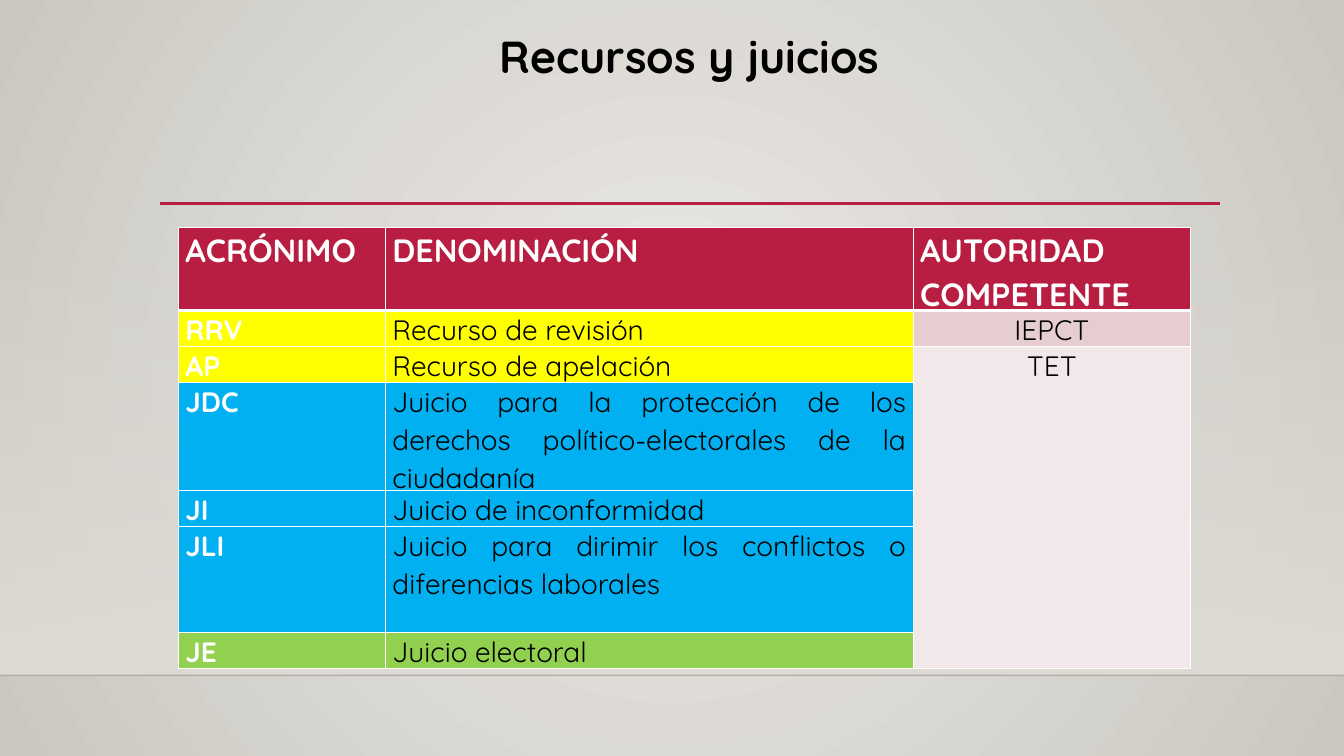
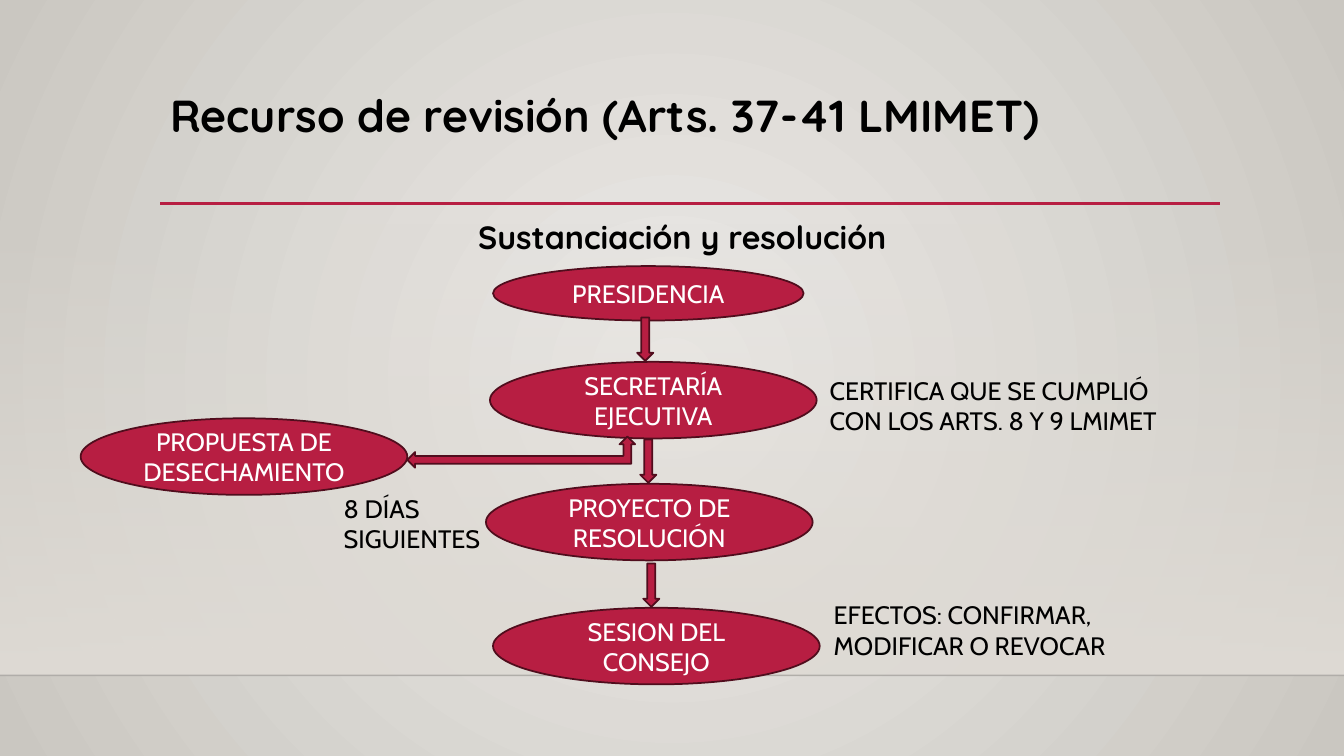
from dataclasses import dataclass

from lxml.etree import SubElement
from pptx import Presentation
from pptx.dml.color import RGBColor
from pptx.enum.shapes import MSO_CONNECTOR, MSO_SHAPE
from pptx.enum.text import MSO_ANCHOR, PP_ALIGN
from pptx.oxml import parse_xml
from pptx.oxml.ns import nsdecls, qn
from pptx.util import Inches, Pt


@dataclass(frozen=True)
class Theme:
    heading_font: str = "Quicksand"
    label_font: str = "Cabin"
    title_size: int = 32
    subtitle_size: int = 23
    cell_size: int = 20
    label_size: int = 18
    black: str = "000000"
    white: str = "FFFFFF"
    crimson: str = "B71E42"
    outline: str = "500D1D"
    floor: str = "000001"
    glow: str = "ECEAE7"
    edge: str = "CAC7C1"
    wall: str = "DFDBD5"
    yellow: str = "FFFF00"
    blue: str = "00B0F0"
    green: str = "92D050"
    rose: str = "E6CDCF"
    pale_rose: str = "F3E8E9"


THEME = Theme()


@dataclass(frozen=True)
class Box:
    left: float
    top: float
    width: float
    height: float

    def place(self):
        return [Inches(v) for v in (self.left, self.top, self.width, self.height)]

    def cell(self, columns, rows, col, row, col_span, row_span):
        """Box covering a span of a grid laid over this one."""
        col_width, row_height = self.width / columns, self.height / rows
        return Box(self.left + col * col_width, self.top + row * row_height,
                   col_span * col_width, row_span * row_height)


SLIDE = Box(0, 0, 13.33, 7.5)
RULE_LEFT, RULE_RIGHT, RULE_TOP = 1.59, 12.1, 2.02
FLOOR_TOP = 6.7


# Shared helpers
def rgb(color):
    return RGBColor.from_string(color)


def write(frame, text, size, color=THEME.black, font=THEME.heading_font,
          bold=False, align=PP_ALIGN.LEFT, spacing=1.0):
    frame.word_wrap = True
    paragraph = frame.paragraphs[0]
    paragraph.alignment = align
    paragraph.line_spacing = spacing
    run = paragraph.add_run()
    run.text = text
    run.font.name = font
    run.font.size = Pt(size)
    run.font.bold = bold
    run.font.color.rgb = rgb(color)


def add_text(slide, box, text, size, **style):
    write(slide.shapes.add_textbox(*box.place()).text_frame, text, size, **style)


def gradient(start, end, direction, start_alpha=100):
    return parse_xml(
        f'<a:gradFill {nsdecls("a")} rotWithShape="1"><a:gsLst>'
        f'<a:gs pos="0"><a:srgbClr val="{start}">'
        f'<a:alpha val="{start_alpha * 1000}"/></a:srgbClr></a:gs>'
        f'<a:gs pos="100000"><a:srgbClr val="{end}"/></a:gs>'
        f'</a:gsLst>{direction}</a:gradFill>')


def add_rule(slide, left, right, top, color, weight, alpha=100):
    rule = slide.shapes.add_connector(
        MSO_CONNECTOR.STRAIGHT, *[Inches(v) for v in (left, top, right, top)])
    rule.line.width = Pt(weight)
    rule.line.color.rgb = rgb(color)
    properties = rule.element.spPr
    tint = properties.find(".//" + qn("a:srgbClr"))
    SubElement(tint, qn("a:alpha"), val=str(alpha * 1000))
    SubElement(properties, qn("a:effectLst"))


def add_solid(slide, preset, box):
    solid = slide.shapes.add_shape(preset, *box.place())
    solid.shadow.inherit = False
    solid.fill.solid()
    solid.fill.fore_color.rgb = rgb(THEME.crimson)
    solid.line.color.rgb = rgb(THEME.outline)
    solid.line.width = Pt(1.25)
    return solid


# Room backdrop, crimson rule and title
def add_backdrop(slide):
    background = parse_xml(f'<p:bg {nsdecls("p", "a")}><p:bgPr><a:effectLst/></p:bgPr></p:bg>')
    background[0].insert(0, gradient(
        THEME.glow, THEME.edge,
        '<a:path path="circle"><a:fillToRect l="50000" t="50000" r="50000" b="50000"/></a:path>'))
    slide.element.cSld.insert(0, background)

    wall_box = Box(0, 2.21, SLIDE.width, FLOOR_TOP - 2.21)
    wall = slide.shapes.add_shape(MSO_SHAPE.RECTANGLE, *wall_box.place())
    wall.shadow.inherit = False
    wall.line.fill.background()
    wall.fill.background()
    properties = wall.element.spPr
    properties.replace(properties.find(qn("a:noFill")), gradient(
        THEME.wall, THEME.wall, '<a:lin ang="5400000" scaled="0"/>', start_alpha=0))

    add_rule(slide, 0, SLIDE.width, FLOOR_TOP, THEME.floor, 1, alpha=20)
    add_rule(slide, RULE_LEFT, RULE_RIGHT, RULE_TOP, THEME.crimson, 2.5)


def new_slide(deck, title, title_top, align=PP_ALIGN.LEFT):
    slide = deck.slides.add_slide(deck.slide_layouts[6])
    add_backdrop(slide)
    add_text(slide, Box(RULE_LEFT, title_top, 10.5, 1.15), title, THEME.title_size,
             bold=True, align=align, spacing=0.9)
    return slide


# Table of remedies
HEADERS = ("ACRÓNIMO", "DENOMINACIÓN", "AUTORIDAD COMPETENTE")
REMEDIES = (
    ("RRV", "Recurso de revisión", THEME.yellow, 0.34),
    ("AP", "Recurso de apelación", THEME.yellow, 0.34),
    ("JDC", "Juicio para la protección de los derechos político-electorales de la ciudadanía",
     THEME.blue, 1.05),
    ("JI", "Juicio de inconformidad", THEME.blue, 0.34),
    ("JLI", "Juicio para dirimir los conflictos o diferencias laborales", THEME.blue, 1.05),
    ("JE", "Juicio electoral", THEME.green, 0.34),
)
HEADER_HEIGHT = 0.69
COLUMN_SHARES = (20.44, 52.14, 27.42)


def style_cell(cell, fill, top=1, bottom=1):
    cell.margin_left = cell.margin_right = Inches(0.07)
    cell.margin_top = cell.margin_bottom = 0
    properties = cell._tc.get_or_add_tcPr()
    for side, weight in (("L", 1), ("R", 1), ("T", top), ("B", bottom)):
        properties.append(parse_xml(
            f'<a:ln{side} {nsdecls("a")} w="{Pt(weight)}"><a:solidFill>'
            f'<a:srgbClr val="{THEME.white}"/></a:solidFill></a:ln{side}>'))
    cell.fill.solid()
    cell.fill.fore_color.rgb = rgb(fill)


def add_remedies(slide, box):
    table = slide.shapes.add_table(len(REMEDIES) + 1, len(HEADERS), *box.place()).table
    for column, share in zip(table.columns, COLUMN_SHARES):
        column.width = Inches(box.width * share / 100)
    table.rows[0].height = Inches(HEADER_HEIGHT)

    for col, header in enumerate(HEADERS):
        cell = table.cell(0, col)
        style_cell(cell, THEME.crimson, bottom=3)
        write(cell.text_frame, header, THEME.subtitle_size, THEME.white,
              bold=True, spacing=1.07)

    for row, (acronym, name, color, height) in enumerate(REMEDIES, start=1):
        table.rows[row].height = Inches(height)
        authority = "IEPCT" if row == 1 else "TET" if row == 2 else ""
        authority_fill = THEME.rose if row == 1 else THEME.pale_rose
        columns = (
            (acronym, color, THEME.white, True, PP_ALIGN.LEFT),
            (name, color, THEME.black, False, PP_ALIGN.JUSTIFY),
            (authority, authority_fill, THEME.black, False, PP_ALIGN.CENTER),
        )
        for col, (text, fill, ink, bold, align) in enumerate(columns):
            cell = table.cell(row, col)
            style_cell(cell, fill, top=3 if row == 1 else 1)
            if text:
                write(cell.text_frame, text, THEME.cell_size, ink,
                      bold=bold, align=align, spacing=1.07)
    table.cell(2, 2).merge(table.cell(len(REMEDIES), 2))


# Flow of the review: places are column, row, columns wide, rows high
FLOW_GRID = (55, 21)
STAGES = (
    ("PRESIDENCIA", (20.45, 0.2, 15.4, 2.7)),
    ("SECRETARÍA EJECUTIVA", (20.3, 4.95, 16.2, 3.8)),
    ("PROPUESTA DE DESECHAMIENTO", (0, 7.75, 16.2, 3.8)),
    ("PROYECTO DE RESOLUCIÓN", (20.1, 11, 16.2, 3.8)),
    ("SESION DEL CONSEJO", (20.45, 17.15, 16.2, 3.8)),
)
STEPS = (
    (MSO_SHAPE.DOWN_ARROW, (27.6, 2.75, 0.8, 2.15)),
    (MSO_SHAPE.LEFT_UP_ARROW, (16.2, 8.65, 11.3, 1.55)),
    (MSO_SHAPE.DOWN_ARROW, (27.75, 8.8, 0.8, 2.15)),
    (MSO_SHAPE.DOWN_ARROW, (27.9, 14.95, 0.8, 2.15)),
)
REMARKS = (
    ("CERTIFICA QUE SE CUMPLIÓ CON LOS ARTS. 8 Y 9 LMIMET", (36.65, 5.35, 17.85, 3.55)),
    ("8 DÍAS SIGUIENTES", (12.55, 11.2, 8.05, 3.55)),
    ("EFECTOS: CONFIRMAR, MODIFICAR O REVOCAR", (36.85, 16.5, 17.85, 3.55)),
)


def add_flow(slide, box):
    for stage, place in STAGES:
        oval = add_solid(slide, MSO_SHAPE.OVAL, box.cell(*FLOW_GRID, *place))
        oval.text_frame.vertical_anchor = MSO_ANCHOR.MIDDLE
        write(oval.text_frame, stage, THEME.label_size, THEME.white,
              THEME.label_font, align=PP_ALIGN.CENTER)
    for arrow, place in STEPS:
        add_solid(slide, arrow, box.cell(*FLOW_GRID, *place))
    for remark, place in REMARKS:
        add_text(slide, box.cell(*FLOW_GRID, *place), remark, THEME.label_size,
                 font=THEME.label_font)


def main():
    deck = Presentation()
    deck.slide_width, deck.slide_height = Inches(SLIDE.width), Inches(SLIDE.height)

    remedies = new_slide(deck, "Recursos y juicios", 0.3, PP_ALIGN.CENTER)
    add_remedies(remedies, Box(1.77, 2.26, 10.04, 4.24))

    review = new_slide(deck, "Recurso de revisión (Arts. 37-41 LMIMET)", 0.88)
    add_text(review, Box(0.45, 2.03, 12.64, 0.6), "Sustanciación y resolución",
             THEME.subtitle_size, bold=True, align=PP_ALIGN.CENTER, spacing=1.2)
    add_flow(review, Box(0.8, 2.6, 11, 4.2))

    deck.save("out.pptx")


if __name__ == "__main__":
    main()
